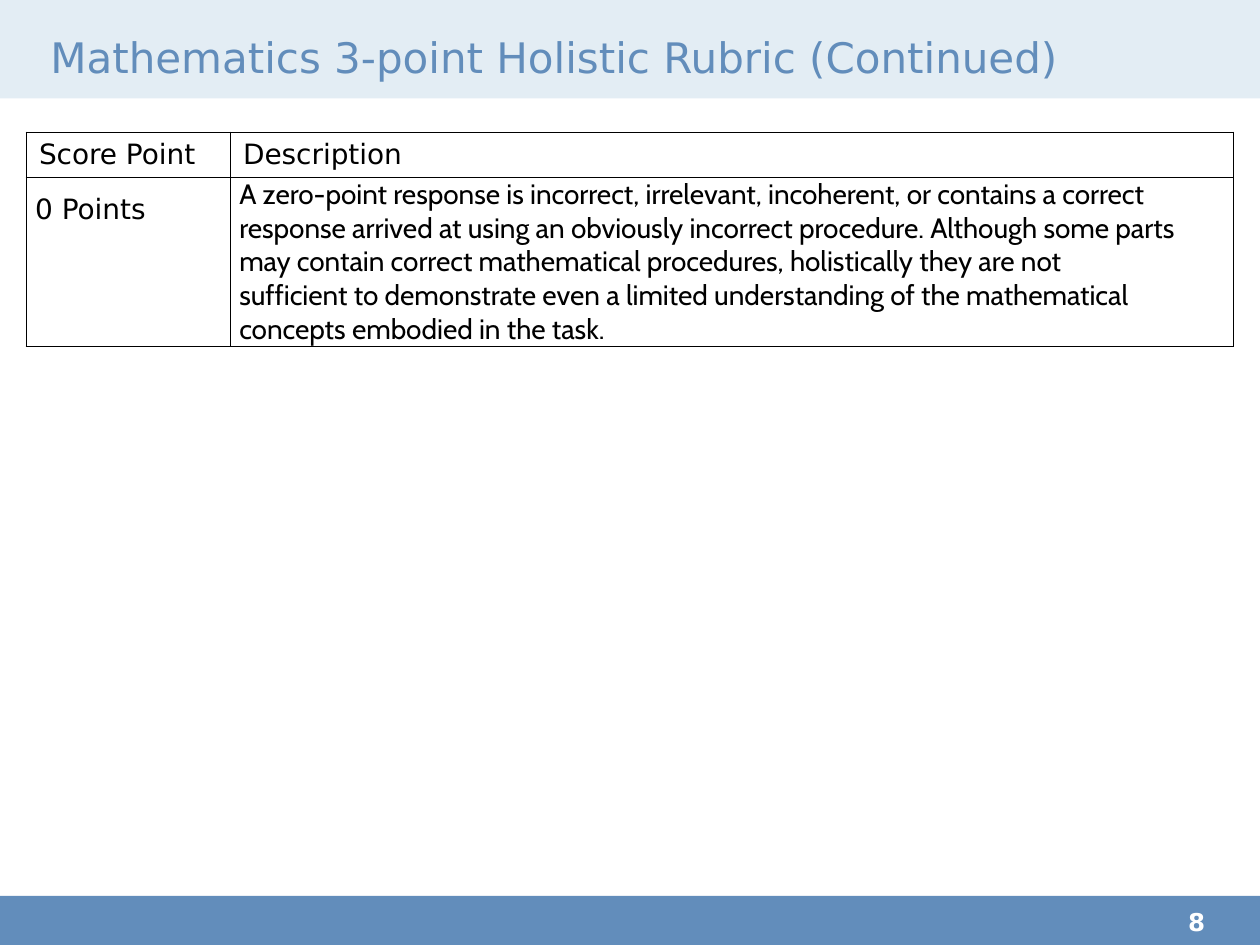
from typing import NamedTuple

from lxml.etree import SubElement
from pptx import Presentation
from pptx.dml.color import RGBColor
from pptx.enum.shapes import MSO_SHAPE
from pptx.enum.text import MSO_ANCHOR, PP_ALIGN
from pptx.oxml.ns import qn
from pptx.util import Pt

BLUE, PALE, WHITE, BLACK = "628DBB", "E3EDF4", "FFFFFF", "000000"
SANS, BODY = "DejaVu Sans", "Cabin"


class Band(NamedTuple):
    left: float
    top: float
    width: float
    height: float
    color: str


class CellSpec(NamedTuple):
    paragraphs: list[str]
    font_name: str = SANS
    margins: tuple[float, float] = (7.2, 3.6)  # horizontal, vertical
    anchor: MSO_ANCHOR = MSO_ANCHOR.BOTTOM
    line_spacing: float = 1.0


BANDS = [
    Band(0, 511.9, 720.7, 30.2, BLUE),
    Band(0, 0, 720, 94.3, PALE),
    Band(0, 56.2, 720, 61.9, WHITE),
]
COLUMN_WIDTHS = [116.6, 573.1]
ROW_HEIGHTS = [25.7, 96.7]
RUBRIC = [
    [CellSpec(["Score Point"]), CellSpec(["Description"])],
    [
        CellSpec(["0 Points"], SANS, (5.04, 0), MSO_ANCHOR.TOP, 1.5),
        CellSpec(
            [
                "A zero-point response is incorrect, irrelevant, incoherent, or contains "
                "a correct response arrived at using an obviously incorrect procedure. "
                "Although some parts may contain correct mathematical procedures, "
                "holistically they are not",
                "sufficient to demonstrate even a limited understanding of the "
                "mathematical concepts embodied in the task.",
            ],
            BODY, (5.04, 0), MSO_ANCHOR.TOP,
        ),
    ],
]


def rgb(color: str) -> RGBColor:
    return RGBColor.from_string(color)


def place(shape, left: float, top: float, width: float, height: float) -> None:
    shape.left, shape.top = Pt(left), Pt(top)
    shape.width, shape.height = Pt(width), Pt(height)


def set_margins(frame, left: float, top: float, right: float, bottom: float) -> None:
    frame.margin_left, frame.margin_top = Pt(left), Pt(top)
    frame.margin_right, frame.margin_bottom = Pt(right), Pt(bottom)


def style(paragraph, name: str, size: float, color: str, bold: bool = False) -> None:
    font = paragraph.font
    font.name, font.size, font.bold = name, Pt(size), bold
    font.color.rgb = rgb(color)
    paragraph.alignment = PP_ALIGN.LEFT


def draw_band(slide, band: Band) -> None:
    shape = slide.shapes.add_shape(MSO_SHAPE.RECTANGLE, *map(Pt, band[:4]))
    shape.shadow.inherit = False
    shape.fill.solid()
    shape.fill.fore_color.rgb = rgb(band.color)
    shape.line.fill.background()


def add_borders(cell, color: str, width: float) -> None:
    properties = cell._tc.get_or_add_tcPr()
    for side in ("lnL", "lnR", "lnT", "lnB"):
        line = SubElement(properties, qn(f"a:{side}"), w=str(Pt(width)))
        SubElement(SubElement(line, qn("a:solidFill")), qn("a:srgbClr"), val=color)


def fill_cell(cell, spec: CellSpec) -> None:
    cell.text = "\n".join(spec.paragraphs)
    horizontal, vertical = spec.margins
    set_margins(cell, horizontal, vertical, horizontal, vertical)
    cell.vertical_anchor = spec.anchor
    for paragraph in cell.text_frame.paragraphs:
        style(paragraph, spec.font_name, 16, BLACK)
        paragraph.line_spacing = spec.line_spacing
    add_borders(cell, BLACK, 1)
    cell.fill.background()


def draw_rubric(slide) -> None:
    table = slide.shapes.add_table(
        len(ROW_HEIGHTS), len(COLUMN_WIDTHS), Pt(15.1), Pt(75.6),
        Pt(sum(COLUMN_WIDTHS)), Pt(sum(ROW_HEIGHTS)),
    ).table
    table.first_row = table.horz_banding = False
    for column, width in zip(table.columns, COLUMN_WIDTHS):
        column.width = Pt(width)
    for row, height, specs in zip(table.rows, ROW_HEIGHTS, RUBRIC):
        row.height = Pt(height)
        for cell, spec in zip(row.cells, specs):
            fill_cell(cell, spec)


def main() -> None:
    presentation = Presentation()
    presentation.slide_width, presentation.slide_height = Pt(720), Pt(540)
    slide = presentation.slides.add_slide(presentation.slide_layouts[5])

    # Header and footer bands
    for band in BANDS:
        draw_band(slide, band)

    # Title, brought in front of the bands
    title = slide.shapes.title
    slide.shapes._spTree.append(title._element)
    place(title, 28.8, 16.6, 648, 35.3)
    title.text_frame.text = "Mathematics 3-point Holistic Rubric (Continued)"
    title.text_frame.vertical_anchor = MSO_ANCHOR.MIDDLE
    set_margins(title.text_frame, 0, 0, 7.2, 3.6)
    style(title.text_frame.paragraphs[0], SANS, 24, BLUE)

    # Rubric table
    draw_rubric(slide)

    # Page number
    number = slide.shapes.add_textbox(Pt(679), Pt(518.4), Pt(41), Pt(21.6))
    number.text_frame.word_wrap = True
    number.text_frame.text = "8"
    set_margins(number.text_frame, 0, 0, 0, 0)
    style(number.text_frame.paragraphs[0], SANS, 14, WHITE, bold=True)

    presentation.save("out.pptx")


if __name__ == "__main__":
    main()
